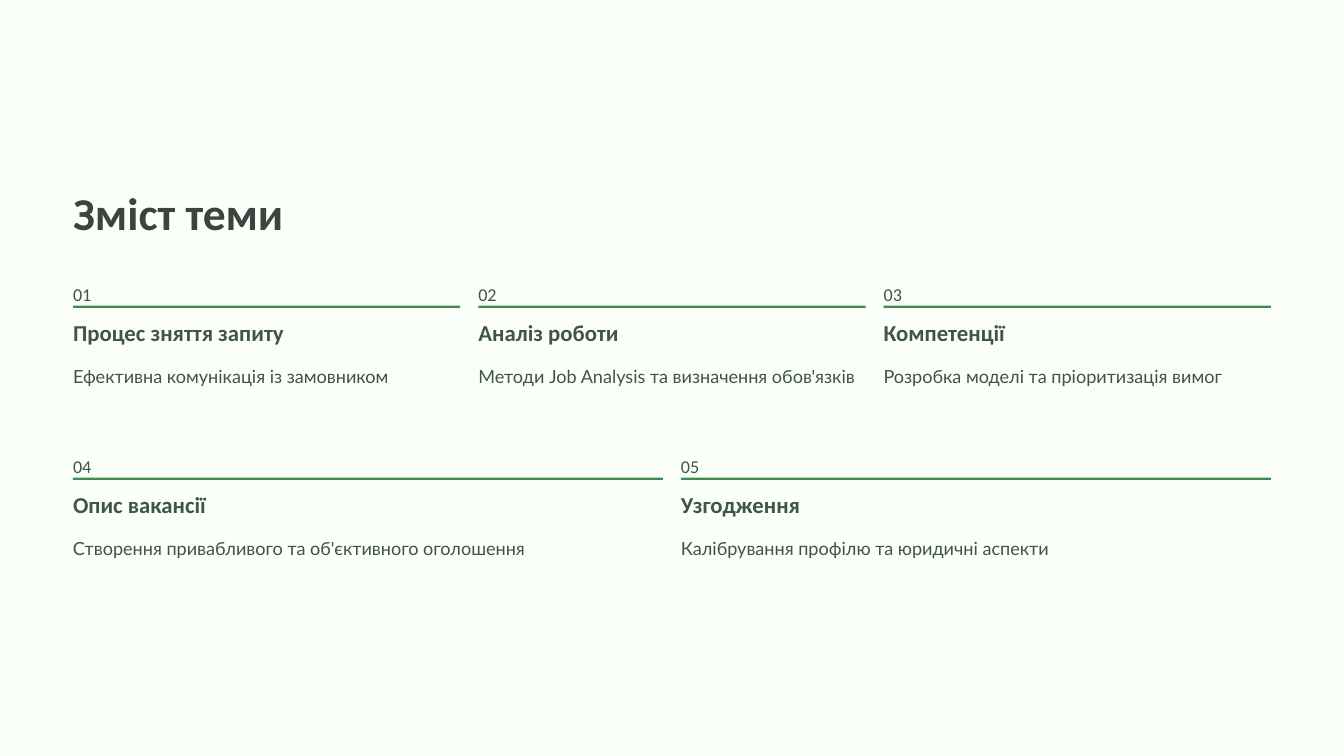
from pptx import Presentation
from pptx.dml.color import RGBColor
from pptx.enum import shapes, text
from pptx.util import Pt

PAPER, INK, GREEN, TITLE = "FAFFFA", "405449", "438951", "3B4540"
LEFT, WIDTH, GAP = 62.6, 1026.7, 15.5
FIRST_ROW, ROW_PITCH = 236.9, 147.4
TOPIC_ROWS = [
    [("Процес зняття запиту", "Ефективна комунікація із замовником"),
     ("Аналіз роботи", "Методи Job Analysis та визначення обов'язків"),
     ("Компетенції", "Розробка моделі та пріоритизація вимог")],
    [("Опис вакансії", "Створення привабливого та об'єктивного оголошення"),
     ("Узгодження", "Калібрування профілю та юридичні аспекти")],
]


def paint(fill, colour):
    """Give a fill one solid colour."""
    fill.solid()
    fill.fore_color.rgb = RGBColor.from_string(colour)


def place(shape, left, top, width, height):
    """Move and size a shape, in points."""
    shape.left, shape.top = Pt(left), Pt(top)
    shape.width, shape.height = Pt(width), Pt(height)


def write(shape, words, size, spacing, font="Calibri", colour=INK, bold=False):
    """Set one left-aligned line of text without insets."""
    frame = shape.text_frame
    frame.text = words
    frame.auto_size = text.MSO_AUTO_SIZE.NONE
    frame.word_wrap = False
    frame.vertical_anchor = text.MSO_ANCHOR.TOP
    frame.margin_left = frame.margin_right = frame.margin_top = frame.margin_bottom = 0
    line = frame.paragraphs[0]
    line.alignment = text.PP_ALIGN.LEFT
    line.line_spacing = Pt(spacing)
    line.space_before = Pt(0)
    line.font.name, line.font.size, line.font.bold = font, Pt(size), bold
    paint(line.font.fill, colour)


def add_line(slide, box, words, size, spacing, **style):
    """Add a text box with one line of text."""
    write(slide.shapes.add_textbox(*map(Pt, box)), words, size, spacing, **style)


def add_topic(slide, left, top, width, number, heading, summary):
    """Draw one numbered topic below its rule."""
    add_line(slide, (left, top, 15.8, 19.4), f"{number:02}", 15.5, 25)
    rule = slide.shapes.add_shape(
        shapes.MSO_SHAPE.RECTANGLE, Pt(left), Pt(top + 25), Pt(width), Pt(2))
    rule.shadow.inherit = False
    paint(rule.fill, GREEN)
    rule.line.fill.background()
    add_line(slide, (left, top + 36, 195, 24.5), heading, 19.5, 24, bold=True)
    add_line(slide, (left, top + 70, width, 25), summary, 15.5, 25, font="Lato")


def add_topics(slide, left, top, width):
    """Share the width of each row equally between its topics."""
    number = 0
    for row, topics in enumerate(TOPIC_ROWS):
        column = (width - GAP * (len(topics) - 1)) / len(topics)
        for position, (heading, summary) in enumerate(topics):
            number += 1
            add_topic(slide, left + position * (column + GAP), top + row * ROW_PITCH,
                      column, number, heading, summary)


def main():
    """Build the contents slide."""
    deck = Presentation()
    deck.slide_width, deck.slide_height = Pt(1152), Pt(648)
    slide = deck.slides.add_slide(deck.slide_layouts[5])
    paint(slide.background.fill, PAPER)
    title = slide.shapes.title
    place(title, LEFT, 157, 391, 49)
    write(title, "Зміст теми", 39, 48.5, colour=TITLE, bold=True)
    add_topics(slide, LEFT, FIRST_ROW, WIDTH)
    deck.save("out.pptx")


if __name__ == "__main__":
    main()
